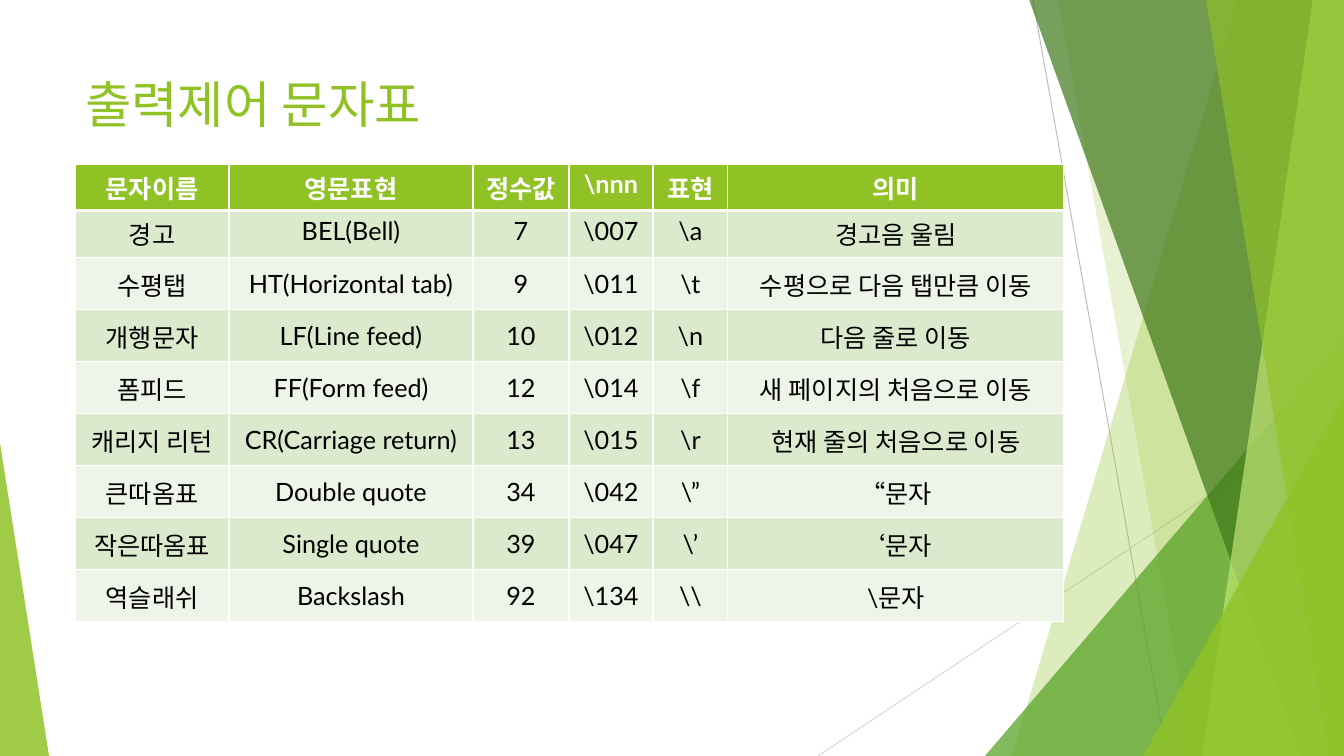
from lxml import etree
from pptx import Presentation, util as u
from pptx.dml.color import RGBColor
from pptx.enum import shapes, text
from pptx.oxml.ns import qn

PX = 914400 / 100.8
WIDTH, HEIGHT = 1344, 756
FONT = "Lato"
COLORS = {
    "lime": "90C226", "green": "54A021", "forest": "3F7819", "pale": "C0E474",
    "gray": "BFBFBF", "light_gray": "D9D9D9", "white": "FFFFFF", "black": "000000",
    "band_dark": "DBE9CD", "band_light": "EEF4E8",
}
COLUMNS = [154, 244, 96, 84, 75, 336]
ROW_HEIGHTS = [46, 47] + [52] * 7
ROWS = [
    ("문자이름", "영문표현", "정수값", r"\nnn", "표현", "의미"),
    ("경고", "BEL(Bell)", "7", r"\007", r"\a", "경고음 울림"),
    ("수평탭", "HT(Horizontal tab)", "9", r"\011", r"\t", "수평으로 다음 탭만큼 이동"),
    ("개행문자", "LF(Line feed)", "10", r"\012", r"\n", "다음 줄로 이동"),
    ("폼피드", "FF(Form feed)", "12", r"\014", r"\f", "새 페이지의 처음으로 이동"),
    ("캐리지 리턴", "CR(Carriage return)", "13", r"\015", r"\r", "현재 줄의 처음으로 이동"),
    ("큰따옴표", "Double quote", "34", r"\042", r"\”", "“문자"),
    ("작은따옴표", "Single quote", "39", r"\047", r"\’", "‘문자"),
    ("역슬래쉬", "Backslash", "92", r"\134", r"\\", r"\문자"),
]


def px(*lengths):
    return [u.Emu(round(length * PX)) for length in lengths]


def rgb(name):
    return RGBColor.from_string(COLORS[name])


def style_font(para, size, color, bold=False):
    para.font.name = FONT
    para.font.size = u.Pt(size)
    para.font.bold = bold
    para.font.color.rgb = rgb(color)


def fill_translucent(shape, color, opacity):
    shape.shadow.inherit = False
    shape.line.fill.background()
    shape.fill.solid()
    shape.fill.fore_color.rgb = rgb(color)
    tint = shape.fill._xPr.find(qn("a:solidFill"))[0]
    etree.SubElement(tint, qn("a:alpha"), val=str(opacity * 1000))


def add_hairline(page, start, end, color):
    line = page.shapes.add_connector(shapes.MSO_CONNECTOR.STRAIGHT, *px(*start, *end))
    line.line.color.rgb = rgb(color)
    line.line.width = u.Pt(0.75)
    etree.SubElement(line._element.spPr, qn("a:effectLst"))


def add_facet(page, right, bottom, top_x, bottom_x, color, opacity):
    """Add a panel with a slanted left edge that fills up to the right edge."""
    builder = page.shapes.build_freeform(top_x, -1, scale=PX)
    builder.add_line_segments([(right, -1), (right, bottom), (bottom_x, bottom)])
    fill_translucent(builder.convert_to_shape(), color, opacity)


def add_wedge(page, left, bottom, width, height, apex, color, opacity):
    wedge = page.shapes.add_shape(
        shapes.MSO_SHAPE.ISOSCELES_TRIANGLE, *px(left, bottom - height, width, height))
    wedge.adjustments[0] = apex
    fill_translucent(wedge, color, opacity)


def add_backdrop(page, right, bottom):
    add_hairline(page, (1033, 0), (1167, bottom), "gray")
    add_hairline(page, (right, 406), (818, bottom), "light_gray")
    add_facet(page, right, bottom, 1238, 1012, "lime", 30)
    add_facet(page, right, bottom, 1058, 1193, "lime", 20)
    add_wedge(page, right - 359, bottom, 359, 420, 1, "green", 72)
    add_facet(page, right, bottom, 1029, 1301, "forest", 70)
    add_facet(page, right, bottom, 1313, 1202, "pale", 70)
    add_facet(page, right, bottom, 1206, 1329, "lime", 65)
    add_wedge(page, right - 201, bottom, 201, 360, 1, "lime", 80)
    add_wedge(page, 0, bottom, 49, 313, 0, "lime", 85)


def set_title(page, left, top, width, height):
    title = page.shapes.title
    title.left, title.top, title.width, title.height = px(left, top, width, height)
    frame = title.text_frame
    frame.text = "출력제어 문자표"
    frame.word_wrap = True
    frame.vertical_anchor = text.MSO_ANCHOR.TOP
    para = frame.paragraphs[0]
    para.alignment = text.PP_ALIGN.LEFT
    style_font(para, 36, "lime")


def add_borders(cell, widths):
    """Draw white borders, with widths in points for left, right, top, bottom."""
    properties = cell._tc.get_or_add_tcPr()
    for side, width in zip("LRTB", widths):
        border = etree.SubElement(properties, qn(f"a:ln{side}"), w=str(u.Pt(width)))
        fill = etree.SubElement(border, qn("a:solidFill"))
        etree.SubElement(fill, qn("a:srgbClr"), val=COLORS["white"])


def format_cell(cell, wording, row):
    header = row == 0
    add_borders(cell, (1, 1, 3 if row == 1 else 1, 3 if header else 1))
    cell.fill.solid()
    band = "band_dark" if row % 2 else "band_light"
    cell.fill.fore_color.rgb = rgb("lime" if header else band)
    if row > 1:
        cell.vertical_anchor = text.MSO_ANCHOR.MIDDLE
        cell.margin_top, cell.margin_bottom = px(8, 7)
    cell.text = wording
    para = cell.text_frame.paragraphs[0]
    para.alignment = text.PP_ALIGN.CENTER
    style_font(para, 18, "white" if header else "black", header)


def add_character_table(page, left, top):
    frame = page.shapes.add_table(
        len(ROWS), len(COLUMNS), *px(left, top, sum(COLUMNS), sum(ROW_HEIGHTS)))
    table = frame.table
    for column, width in zip(table.columns, px(*COLUMNS)):
        column.width = width
    for row, height in zip(table.rows, px(*ROW_HEIGHTS)):
        row.height = height
    for row, wordings in enumerate(ROWS):
        for column, wording in enumerate(wordings):
            format_cell(table.cell(row, column), wording, row)


def main():
    deck = Presentation()
    deck.slide_width, deck.slide_height = px(WIDTH, HEIGHT)
    page = deck.slides.add_slide(deck.slide_layouts[5])
    add_backdrop(page, WIDTH, HEIGHT)
    set_title(page, 75, 68, 948, 145)
    add_character_table(page, 75, 164)
    deck.save("out.pptx")


if __name__ == "__main__":
    main()
